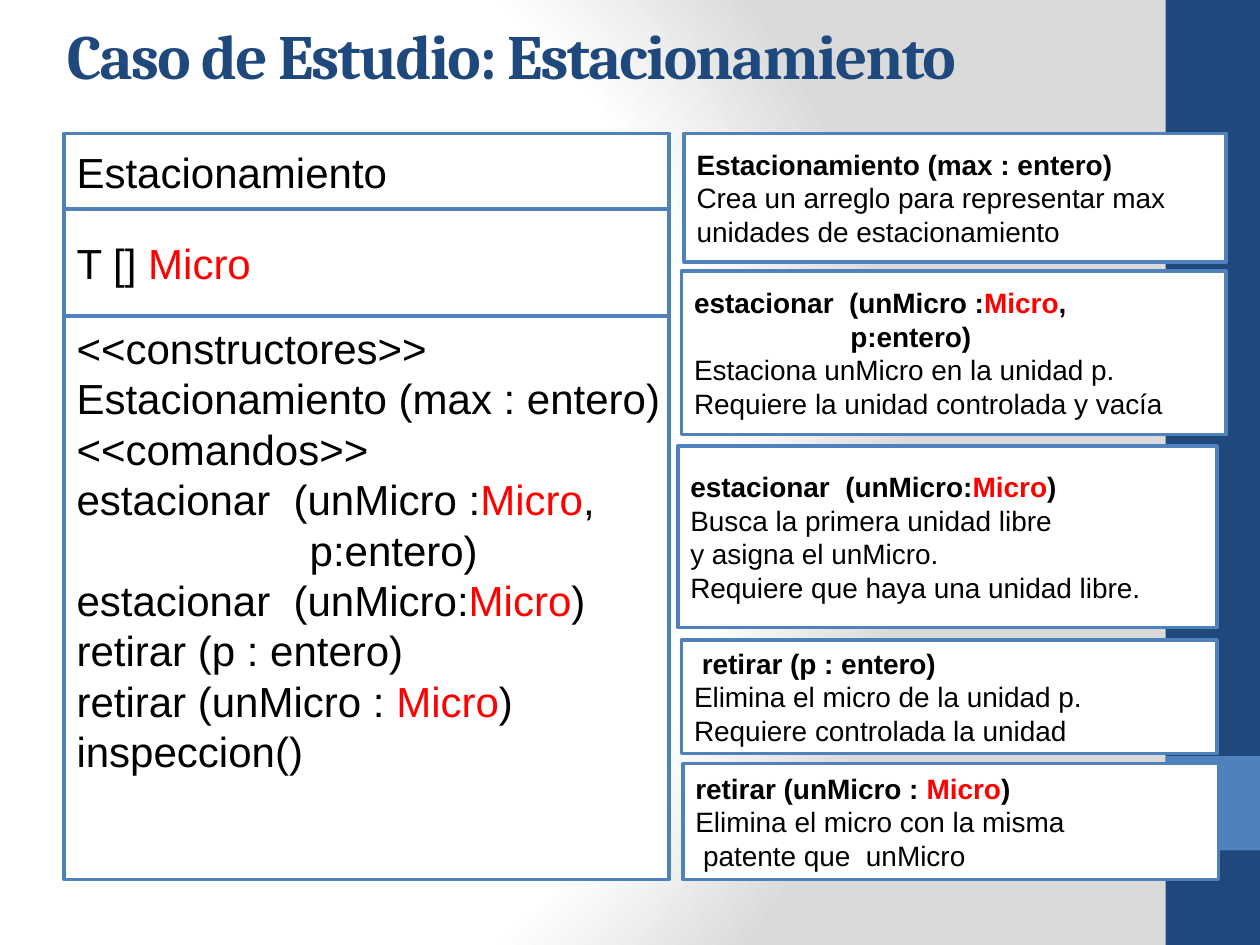
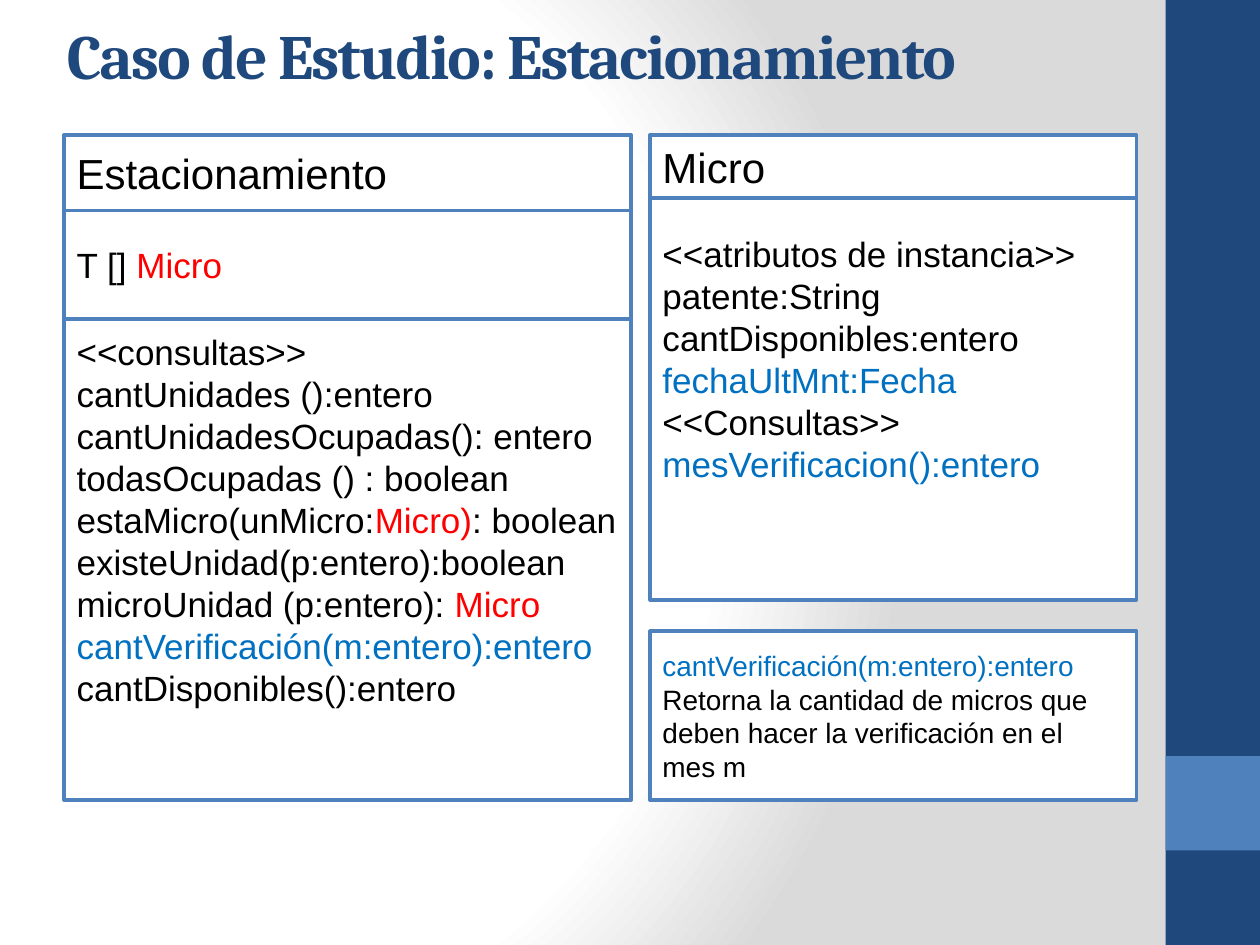
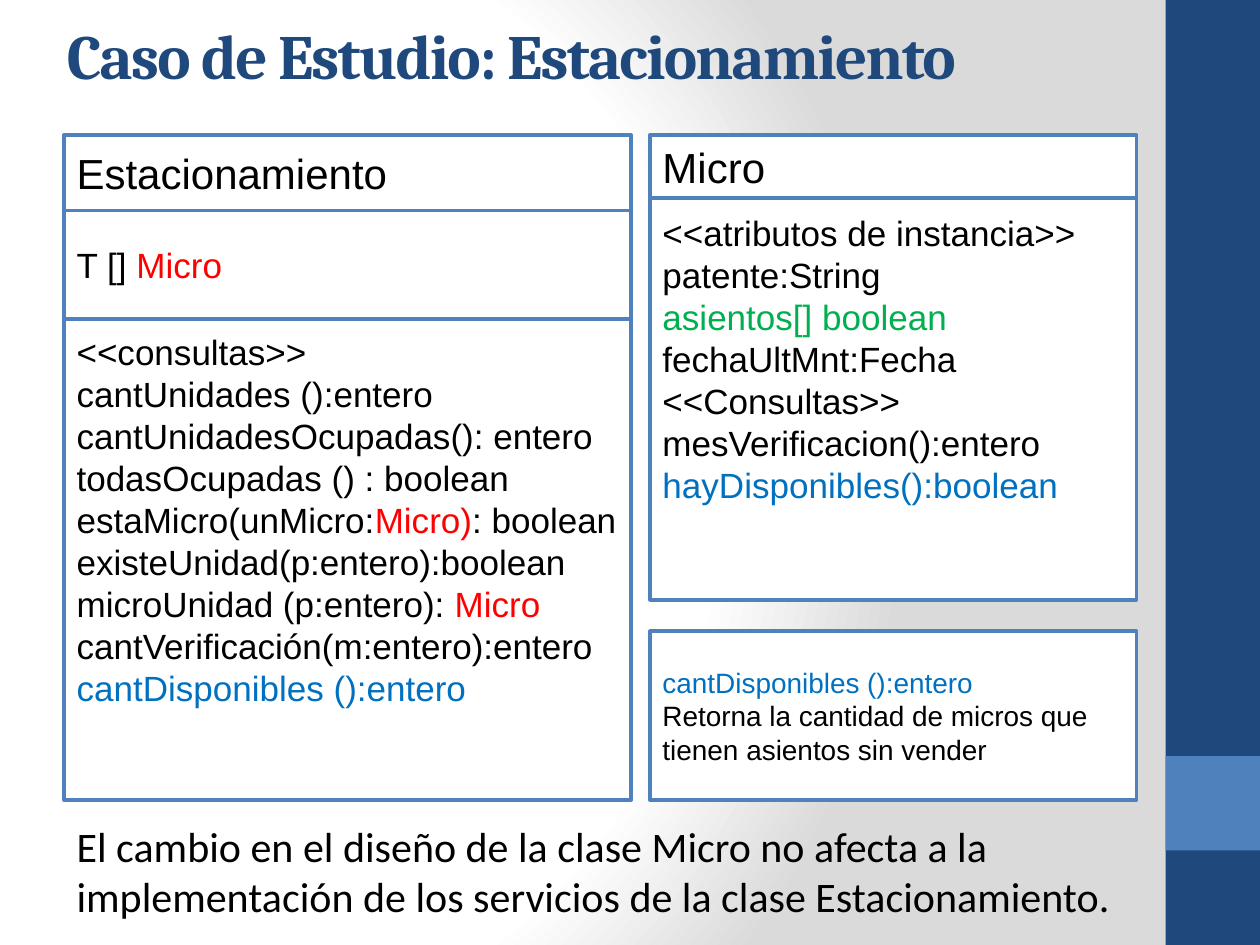
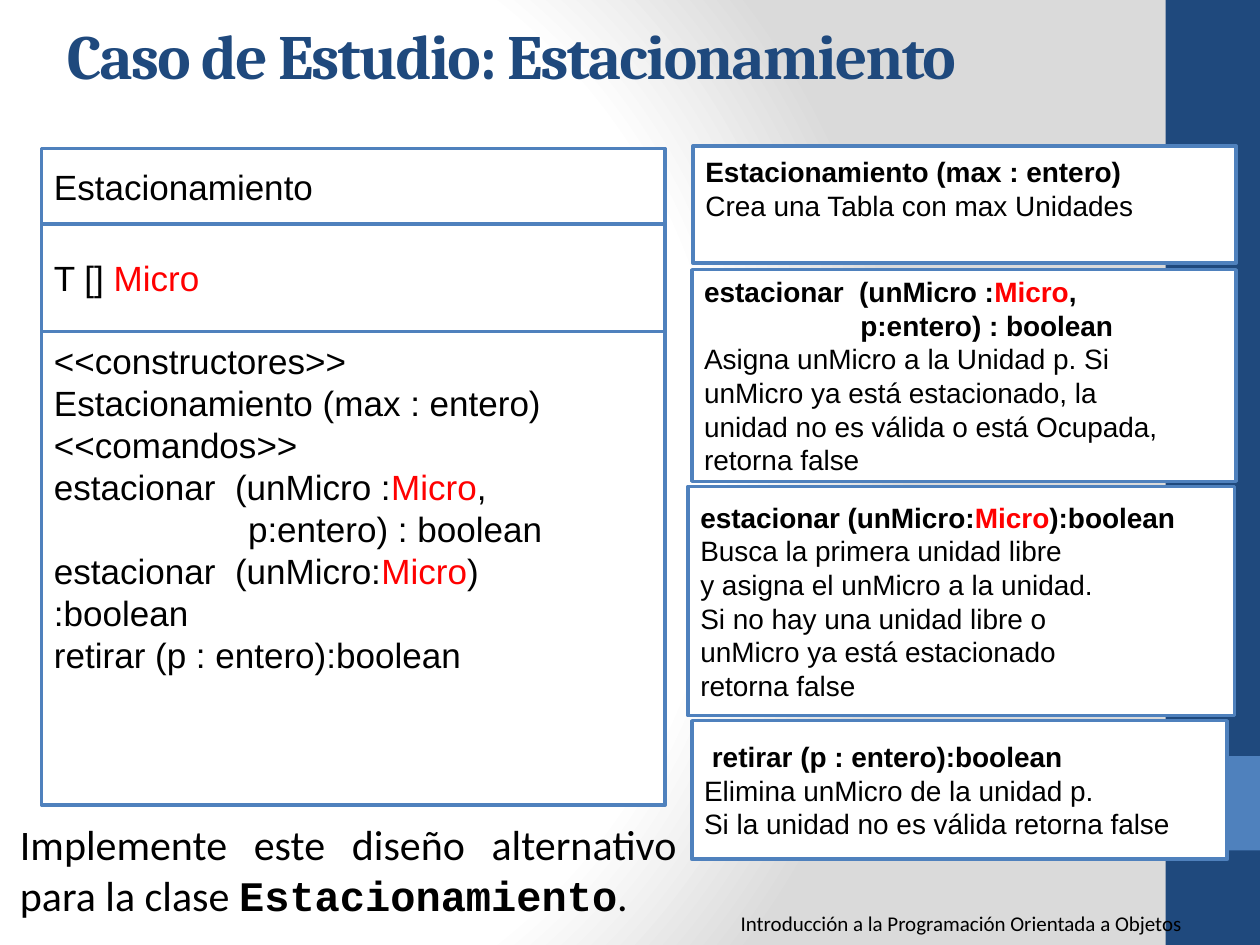
from dataclasses import dataclass

from pptx import Presentation
from pptx.dml.color import RGBColor
from pptx.enum.shapes import MSO_SHAPE
from pptx.enum.text import MSO_ANCHOR, MSO_AUTO_SIZE, PP_ALIGN
from pptx.oxml import parse_xml
from pptx.oxml.ns import nsdecls, qn
from pptx.util import Pt

EMU_PER_PX = 9144


@dataclass(frozen=True)
class Theme:
    navy: str = "1F497D"
    blue: str = "4F81BD"
    white: str = "FFFFFF"
    grey: str = "DADADA"
    black: str = "000000"
    red: str = "FF0000"
    query: str = "0070C0"
    green: str = "00B050"
    title_font: str = "Cambria"
    code_font: str = "Arial"
    text_font: str = "Calibri"
    mono_font: str = "Courier New"
    title: int = 36
    large: int = 24
    medium: int = 20
    small: int = 16
    footer: int = 12
    border: int = 2


THEME = Theme()


@dataclass(frozen=True)
class Line:
    text: str
    accent: str = THEME.red
    bold: bool = False
    indented: bool = False


@dataclass(frozen=True)
class Section:
    height: int
    size: int
    lines: tuple
    free_lines: int = 0


def px(length):
    return length * EMU_PER_PX


def apply(target, values):
    for name, value in values.items():
        setattr(target, name, value)


def place(part, left, top, width, height):
    apply(part, {"left": px(left), "top": px(top),
                 "width": px(width), "height": px(height)})


def add_run(paragraph, text, font, size, color=THEME.black, bold=False):
    run = paragraph.add_run()
    run.text = text
    apply(run.font, {"name": font, "size": Pt(size), "bold": bold})
    run.font.color.rgb = RGBColor.from_string(color)
    return run


def add_rect(slide, bounds, fill, border=None):
    rect = slide.shapes.add_shape(MSO_SHAPE.RECTANGLE, *map(px, bounds))
    rect.shadow.inherit = False
    rect.fill.solid()
    rect.fill.fore_color.rgb = RGBColor.from_string(fill)
    if border:
        rect.line.color.rgb = RGBColor.from_string(border)
        rect.line.width = Pt(THEME.border)
    else:
        rect.line.fill.background()
    return rect


def write_line(paragraph, line, size):
    paragraph.alignment = PP_ALIGN.LEFT
    if line.indented:
        properties = paragraph._p.get_or_add_pPr()
        properties.set("marL", str(px(round(size * 7.72))))
        properties.set("indent", "0")
    for position, piece in enumerate(line.text.split("|")):
        if piece:
            color = line.accent if position % 2 else THEME.black
            add_run(paragraph, piece, THEME.code_font, size, color, line.bold)


def add_box(slide, bounds, lines, size=THEME.small, free_lines=0):
    frame = add_rect(slide, bounds, THEME.white, THEME.blue).text_frame
    apply(frame, {"word_wrap": False, "vertical_anchor": MSO_ANCHOR.MIDDLE,
                  "margin_bottom": px(5 + round(free_lines * size * 1.6))})
    for position, line in enumerate(lines):
        paragraph = frame.add_paragraph() if position else frame.paragraphs[0]
        write_line(paragraph, line, size)


def add_class(slide, left, top, width, sections):
    for section in sections:
        add_box(slide, (left, top, width, section.height), section.lines,
                section.size, section.free_lines)
        top += section.height


def add_text(slide, bounds, pieces, size, **paragraph_format):
    frame = slide.shapes.add_textbox(*map(px, bounds)).text_frame
    frame.word_wrap = True
    paragraph = frame.paragraphs[0]
    apply(paragraph, paragraph_format)
    for text, font, bold in pieces:
        add_run(paragraph, text, font, size, bold=bold)
    return frame


def add_case_slide(prs):
    slide = prs.slides.add_slide(prs.slide_layouts[5])
    title = slide.shapes.title
    place(title, 43, 5, 914, 76)
    apply(title.text_frame, {"word_wrap": True, "auto_size": MSO_AUTO_SIZE.NONE,
                             "vertical_anchor": MSO_ANCHOR.MIDDLE})
    paragraph = title.text_frame.paragraphs[0]
    paragraph.alignment = PP_ALIGN.LEFT
    run = add_run(paragraph, "Caso de Estudio: Estacionamiento",
                  THEME.title_font, THEME.title, THEME.navy, True)
    run._r.get_or_add_rPr().set("spc", "-100")
    return slide


def style_master(prs, slide):
    master = prs.slide_master
    master.background.fill.solid()
    background = master.element.find(".//" + qn("p:bgPr"))
    stops = "".join(
        f'<a:gs pos="{pos}"><a:srgbClr val="{color}"/></a:gs>'
        for pos, color in ((0, THEME.white), (75000, THEME.white), (100000, THEME.grey)))
    background.replace(background[0], parse_xml(
        f'<a:gradFill {nsdecls("a")} rotWithShape="1"><a:gsLst>{stops}</a:gsLst>'
        '<a:path path="circle">'
        '<a:fillToRect l="20000" t="50000" r="100000" b="50000"/>'
        '</a:path></a:gradFill>'))
    bands = (((925, 0, 75, 750), THEME.navy), ((925, 600, 75, 75), THEME.blue))
    for position, (bounds, color) in enumerate(bands):
        band = add_rect(slide, bounds, color).element
        band.nvSpPr.cNvPr.set("id", str(100 + position))
        master.shapes.element.insert(2 + position, band)


def parking_sections(name_size, array_size, array_height, services):
    return (Section(60, name_size, (Line("Estacionamiento"),)),
            Section(array_height, array_size, (Line("T [] |Micro"),)),
            services)


def add_commands(prs):
    slide = add_case_slide(prs)
    services = Section(447, THEME.large, (
        Line("<<constructores>>"),
        Line("Estacionamiento (max : entero)"),
        Line("<<comandos>>"),
        Line("estacionar  (unMicro :|Micro|,"),
        Line("p:entero)", indented=True),
        Line("estacionar  (unMicro:|Micro|)"),
        Line("retirar (p : entero)"),
        Line("retirar (unMicro : |Micro|)"),
        Line("inspeccion()")), 2)
    add_class(slide, 51, 106, 480,
              parking_sections(THEME.large, THEME.large, 85, services))
    add_box(slide, (543, 106, 430, 102), (
        Line("Estacionamiento (max : entero)", bold=True),
        Line("Crea un arreglo para representar max"),
        Line("unidades de estacionamiento")))
    add_box(slide, (541, 215, 432, 130), (
        Line("estacionar  (unMicro :|Micro|,", bold=True),
        Line("p:entero)", bold=True, indented=True),
        Line("Estaciona unMicro en la unidad p."),
        Line("Requiere la unidad controlada y vacía")))
    add_box(slide, (538, 354, 428, 144), (
        Line("estacionar  (unMicro:|Micro|)", bold=True),
        Line("Busca la primera unidad libre"),
        Line("y asigna el unMicro."),
        Line("Requiere que haya una unidad libre.")))
    add_box(slide, (541, 508, 425, 90), (
        Line(" retirar (p : entero)", bold=True),
        Line("Elimina el micro de la unidad p."),
        Line("Requiere controlada la unidad")))
    add_box(slide, (542, 606, 425, 92), (
        Line("retirar (unMicro : |Micro|)", bold=True),
        Line("Elimina el micro con la misma"),
        Line(" patente que  unMicro")))
    return slide


def add_queries(prs, last_queries, bus_members, bus_free_lines, explanation):
    slide = add_case_slide(prs)
    services = Section(382, THEME.medium, (
        Line("<<consultas>>"),
        Line("cantUnidades ():entero"),
        Line("cantUnidadesOcupadas(): entero"),
        Line("todasOcupadas () : boolean"),
        Line("estaMicro(unMicro:|Micro)|: boolean"),
        Line("existeUnidad(p:entero):boolean"),
        Line("microUnidad (p:entero): |Micro"),
        *last_queries), 2)
    add_class(slide, 51, 107, 450,
              parking_sections(THEME.large, THEME.medium, 86, services))
    add_class(slide, 516, 107, 386, (
        Section(50, THEME.large, (Line("Micro"),)),
        Section(319, THEME.medium, bus_members, bus_free_lines)))
    add_box(slide, (516, 501, 386, 134), explanation)
    return slide


def add_verification(prs):
    check = Line("|cantVerificación(m:entero):entero", THEME.query)
    add_queries(
        prs,
        (check, Line("cantDisponibles():entero")),
        (Line("<<atributos de instancia>>"),
         Line("patente:String"),
         Line("cantDisponibles:entero"),
         Line("|fechaUltMnt:Fecha", THEME.query),
         Line("<<Consultas>>"),
         Line("|mesVerificacion():entero", THEME.query)), 2,
        (check,
         Line("Retorna la cantidad de micros que"),
         Line("deben hacer la verificación en el"),
         Line("mes m")))


def add_availability(prs):
    available = Line("|cantDisponibles ():entero", THEME.query)
    slide = add_queries(
        prs,
        (Line("cantVerificación(m:entero):entero"), available),
        (Line("<<atributos de instancia>>"),
         Line("patente:String"),
         Line("|asientos[] boolean", THEME.green),
         Line("fechaUltMnt:Fecha"),
         Line("<<Consultas>>"),
         Line("mesVerificacion():entero"),
         Line("|hayDisponibles():boolean", THEME.query)), 2,
        (available,
         Line("Retorna la cantidad de micros que"),
         Line("tienen asientos sin vender")))
    add_text(slide, (51, 646, 850, 91), (
        ("El cambio en el diseño de la clase Micro no afecta a la implementación "
         "de los servicios de la clase Estacionamiento.", THEME.text_font, False),
    ), THEME.large, space_before=Pt(12))


def add_alternative(prs):
    slide = add_case_slide(prs)
    services = Section(376, THEME.medium, (
        Line("<<constructores>>"),
        Line("Estacionamiento (max : entero)"),
        Line("<<comandos>>"),
        Line("estacionar  (unMicro :|Micro|,"),
        Line("p:entero) : boolean", indented=True),
        Line("estacionar  (unMicro:|Micro|)"),
        Line(":boolean"),
        Line("retirar (p : entero):boolean")), 3)
    add_class(slide, 33, 118, 495,
              parking_sections(THEME.medium, THEME.medium, 85, services))
    add_box(slide, (550, 116, 431, 93), (
        Line("Estacionamiento (max : entero)", bold=True),
        Line("Crea una Tabla con max Unidades")), free_lines=1)
    add_box(slide, (549, 214, 432, 168), (
        Line("estacionar  (unMicro :|Micro|,", bold=True),
        Line("p:entero) : boolean", bold=True, indented=True),
        Line("Asigna unMicro a la Unidad p. Si"),
        Line("unMicro ya está estacionado, la"),
        Line("unidad no es válida o está Ocupada,"),
        Line("retorna false")))
    add_box(slide, (546, 386, 434, 182), (
        Line("estacionar (unMicro:|Micro|):boolean", bold=True),
        Line("Busca la primera unidad libre"),
        Line("y asigna el unMicro a la unidad."),
        Line("Si no hay una unidad libre o"),
        Line("unMicro ya está estacionado"),
        Line("retorna false")))
    add_box(slide, (549, 572, 425, 110), (
        Line(" retirar (p : entero):boolean", bold=True),
        Line("Elimina unMicro de la unidad p."),
        Line("Si la unidad no es válida retorna false")))
    add_text(slide, (6, 645, 541, 91), (
        ("Implemente este diseño alternativo para la clase ", THEME.text_font, False),
        ("Estacionamiento", THEME.mono_font, True),
        (".", THEME.text_font, False),
    ), THEME.large, alignment=PP_ALIGN.JUSTIFY, space_before=Pt(5))
    footer = add_text(slide, (317, 715, 631, 35), (
        ("Introducción a la Programación Orientada a Objetos", THEME.text_font, False),
    ), THEME.footer, alignment=PP_ALIGN.RIGHT)
    footer.vertical_anchor = MSO_ANCHOR.MIDDLE


def main():
    prs = Presentation()
    apply(prs, {"slide_width": px(1000), "slide_height": px(750)})
    style_master(prs, add_commands(prs))
    add_verification(prs)
    add_availability(prs)
    add_alternative(prs)
    prs.save("out.pptx")


if __name__ == "__main__":
    main()
